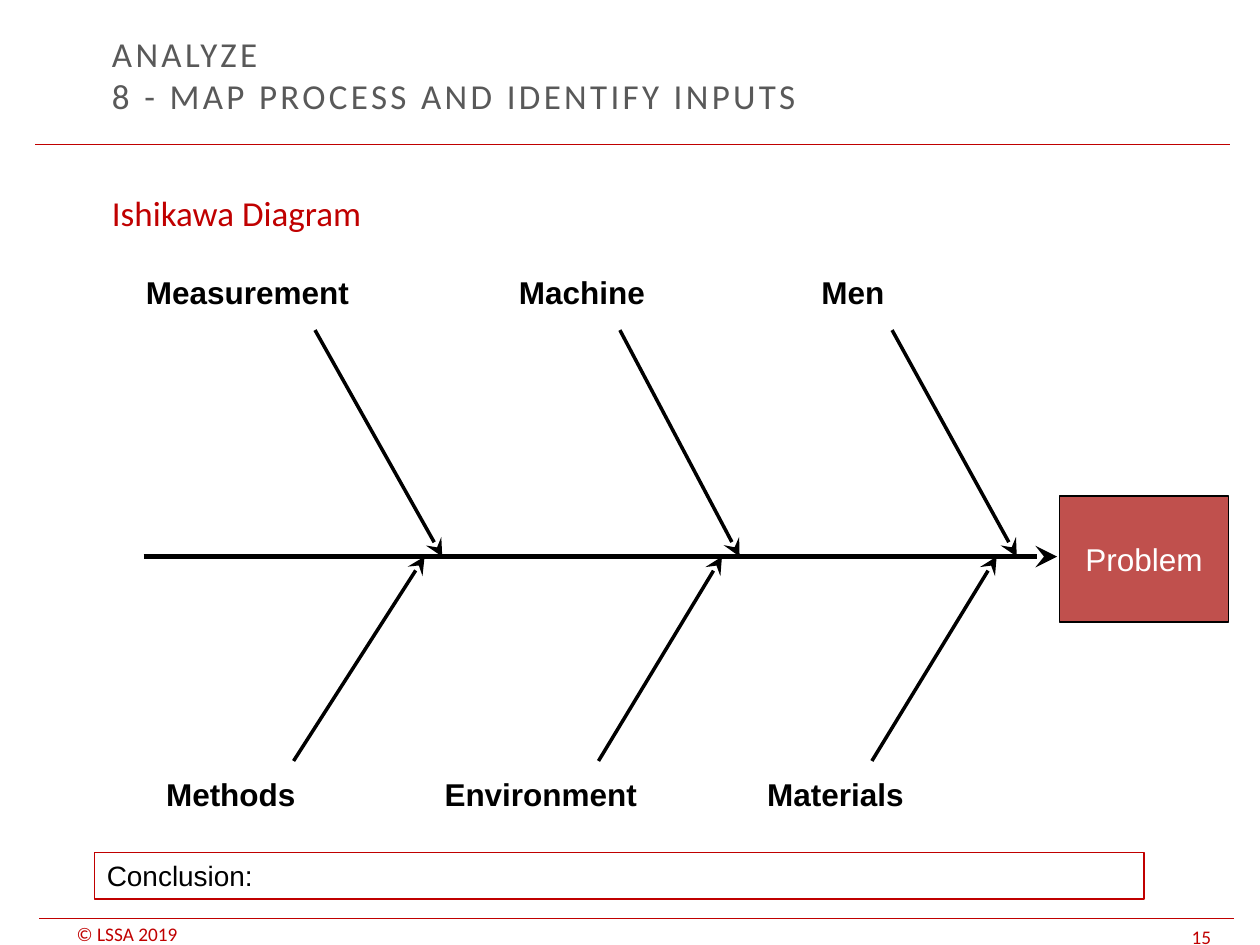
import pptx
import pptx.util
import pptx.dml.color
import pptx.enum.shapes
import pptx.enum.text
import pptx.oxml.ns
from lxml import etree

Pt = pptx.util.Pt
ANCHOR = pptx.enum.text.MSO_ANCHOR
ALIGN = pptx.enum.text.PP_ALIGN
WIDTH, HEIGHT = pptx.util.Inches(10), pptx.util.Inches(7.5)

THEME = {
    "red": "C00000", "grey": "595959", "black": "000000",
    "problem": "C0504D", "white": "FFFFFF",
    "heading_font": "Calibri", "diagram_font": "Arial",
    "heading": 20, "label": 18, "conclusion": 16, "footer": 11,
    "rule": 0.75, "bone": 2, "spine": 2.5, "tracking": 190,
}

# All places are percentages of the slide's width (x) and height (y).
TITLE = ["ANALYZE", "8 - MAP PROCESS AND IDENTIFY INPUTS"]
SUBTITLE = "Ishikawa Diagram"
PROBLEM = "Problem"
CONCLUSION = "Conclusion:"
FOOTERS = [("© LSSA 2019", (5.1, 97.6, 14.2, 2.4)),
           ("15", (93.6, 97.47, 6.4, 2.93))]
RULES = [(2.8, 15.33), (3.1, 97.2)]  # left end, height on the slide
RULE_LENGTH = 94.8

SPINE_Y = 58.9
SPINE = (11.4, 83.9)
LABEL_HEIGHT = 5.33
# Each side: label top, outer end of the bones, then
# causes as (label, label left, label width, bone start x, bone end x)
SIDES = [
    (28.27, 34.93, [("Measurement", 10.6, 18.1, 25, 35.1),
                    ("Machine", 40.2, 12.1, 49.2, 58.7),
                    ("Men", 64.2, 7.1, 70.8, 80.7)]),
    (81.4, 80.53, [("Methods", 12.2, 12.3, 23.3, 33.7),
                   ("Environment", 34.3, 17.3, 47.5, 57.3),
                   ("Materials", 59.9, 12.9, 69.2, 79.1)]),
]


def x(share):
    return round(WIDTH * share / 100)


def y(share):
    return round(HEIGHT * share / 100)


def place(box):
    left, top, width, height = box
    return x(left), y(top), x(width), y(height)


def color(name):
    return pptx.dml.color.RGBColor.from_string(THEME[name])


def add_run(paragraph, words, font, size, ink, bold=False):
    run = paragraph.add_run()
    run.text = words
    run.font.name = THEME[font]
    run.font.size = Pt(THEME[size])
    run.font.color.rgb = color(ink)
    run.font.bold = bold
    return run


def add_frame(slide, box, anchor=ANCHOR.TOP):
    frame = slide.shapes.add_textbox(*place(box)).text_frame
    frame.word_wrap = True
    frame.vertical_anchor = anchor
    return frame


def add_line(slide, start, end, ink, weight, arrow=False):
    line = slide.shapes.add_connector(
        pptx.enum.shapes.MSO_CONNECTOR.STRAIGHT,
        x(start[0]), y(start[1]), x(end[0]), y(end[1]))
    line.line.color.rgb = color(ink)
    line.line.width = Pt(THEME[weight])
    if arrow:
        etree.SubElement(line.line._get_or_add_ln(),
                         pptx.oxml.ns.qn("a:tailEnd"),
                         type="stealth", w="lg", len="lg")
    etree.SubElement(line._element.spPr, pptx.oxml.ns.qn("a:effectLst"))


def add_box(slide, box, words, size, ink, border, fill=None, align=ALIGN.LEFT):
    shape = slide.shapes.add_shape(
        pptx.enum.shapes.MSO_SHAPE.RECTANGLE, *place(box))
    shape.shadow.inherit = False
    if fill:
        shape.fill.solid()
        shape.fill.fore_color.rgb = color(fill)
    else:
        shape.fill.background()
    shape.line.color.rgb = color(border)
    shape.line.width = Pt(THEME["rule"])
    frame = shape.text_frame
    frame.word_wrap = True
    frame.vertical_anchor = ANCHOR.MIDDLE
    frame.paragraphs[0].alignment = align
    add_run(frame.paragraphs[0], words, "diagram_font", size, ink)


def add_headings(slide):
    title = add_frame(slide, (7.9, 3.47, 70.9, 8.8), ANCHOR.MIDDLE).paragraphs[0]
    for number, words in enumerate(TITLE):
        if number:
            title.add_line_break()
        run = add_run(title, words, "heading_font", "heading", "grey")
        run.font._element.set("spc", str(THEME["tracking"]))
    subtitle = add_frame(slide, (7.9, 19.6, 86.6, 73.47)).paragraphs[0]
    add_run(subtitle, SUBTITLE, "heading_font", "heading", "red")


def add_frame_lines_and_footers(slide):
    for left, height in RULES:
        add_line(slide, (left, height), (left + RULE_LENGTH, height), "red", "rule")
    for words, box in FOOTERS:
        frame = add_frame(slide, box, ANCHOR.BOTTOM)
        frame.margin_top = frame.margin_bottom = 0
        add_run(frame.paragraphs[0], words, "heading_font", "footer", "red")


def add_fishbone(slide):
    add_line(slide, (SPINE[0], SPINE_Y), (SPINE[1], SPINE_Y), "black", "spine", True)
    add_box(slide, (84.1, 52.5, 13.4, 13.33), PROBLEM, "label", "white",
            "black", "problem", ALIGN.CENTER)
    for label_top, outer_y, causes in SIDES:
        for cause, left, width, start, end in causes:
            add_line(slide, (start, outer_y), (end, SPINE_Y), "black", "bone", True)
            label = add_frame(slide, (left, label_top, width, LABEL_HEIGHT))
            label.word_wrap = False
            label.auto_size = pptx.enum.text.MSO_AUTO_SIZE.SHAPE_TO_FIT_TEXT
            add_run(label.paragraphs[0], cause, "diagram_font", "label", "black", True)


def main():
    deck = pptx.Presentation()
    deck.slide_width, deck.slide_height = WIDTH, HEIGHT
    slide = deck.slides.add_slide(deck.slide_layouts[6])
    add_frame_lines_and_footers(slide)
    add_headings(slide)
    add_fishbone(slide)
    add_box(slide, (7.5, 90.2, 83.3, 4.93), CONCLUSION, "conclusion", "black", "red")
    deck.save("out.pptx")


if __name__ == "__main__":
    main()
